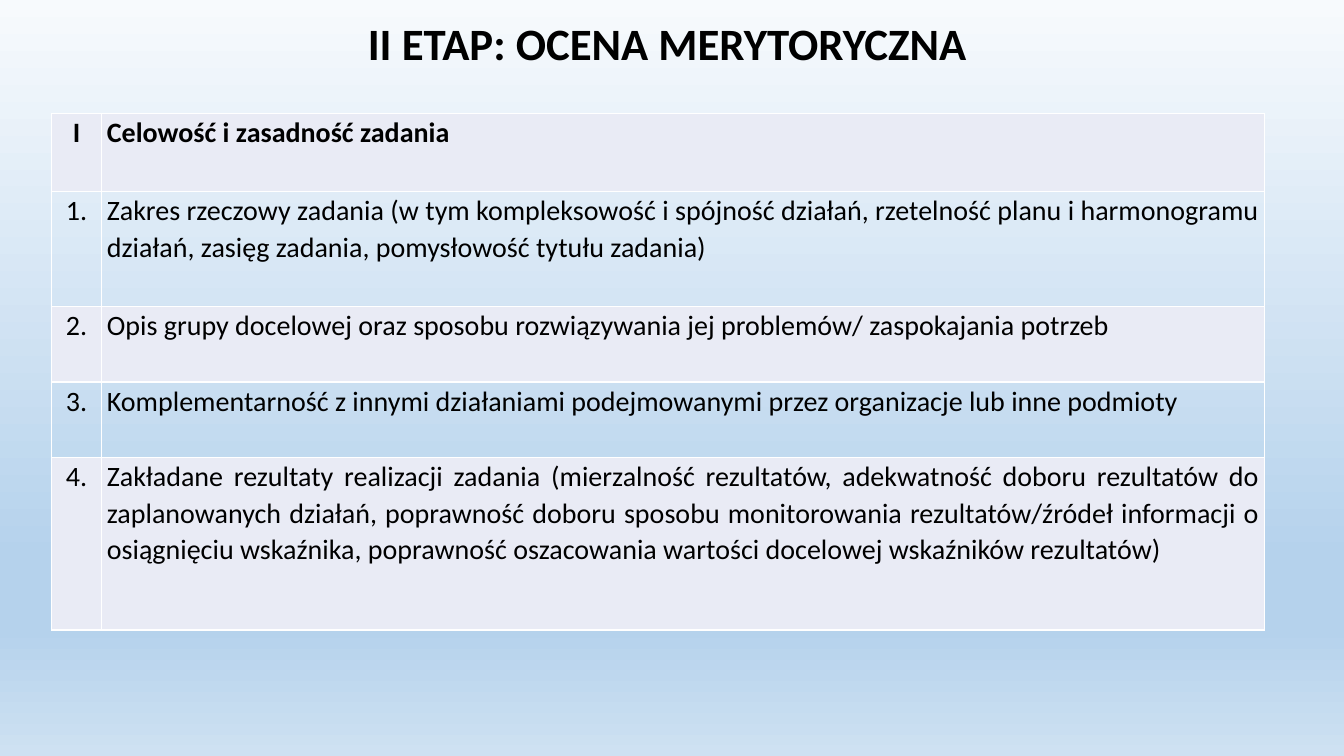
from dataclasses import dataclass

from lxml.etree import SubElement
from pptx import Presentation
from pptx.dml.color import RGBColor
from pptx.enum.text import MSO_ANCHOR as Anchor, PP_ALIGN as Align
from pptx.oxml.ns import qn
from pptx.util import Inches, Pt

WIDTH, HEIGHT = 13.33, 7.5
FONT = "Calibri"
BLACK, WHITE, BAND = "000000", "FFFFFF", "E9EBF5"
BACKGROUND_STOPS = [(0, "F7FAFD"), (74, "B5D2EC"), (83, "B5D2EC"), (100, "CEE1F2")]
TABLE_LEFT, TABLE_TOP = 0.51, 1.13
COLUMN_WIDTHS = [0.5, 11.53]


@dataclass
class Criterion:
    number: str
    text: str
    height: float
    align: Align = Align.LEFT
    bold: bool = False
    space_after: float = 8


CRITERIA = [
    Criterion("I", "Celowość i zasadność zadania", 0.77, bold=True),
    Criterion("1.", "Zakres rzeczowy zadania (w tym kompleksowość i spójność działań, "
              "rzetelność planu i harmonogramu działań, zasięg zadania, "
              "pomysłowość tytułu zadania)", 1.14, Align.JUSTIFY),
    Criterion("2.", "Opis grupy docelowej oraz sposobu rozwiązywania jej problemów/ "
              "zaspokajania potrzeb", 0.75),
    Criterion("3.", "Komplementarność z innymi działaniami podejmowanymi przez "
              "organizacje lub inne podmioty", 0.75),
    Criterion("4.", "Zakładane rezultaty realizacji zadania (mierzalność rezultatów, "
              "adekwatność doboru rezultatów do zaplanowanych działań, poprawność doboru "
              "sposobu monitorowania rezultatów/źródeł informacji o osiągnięciu wskaźnika, "
              "poprawność oszacowania wartości docelowej wskaźników rezultatów) ",
              1.71, Align.JUSTIFY, space_after=0),
]


def color(value: str) -> RGBColor:
    return RGBColor.from_string(value)


def write(frame, text: str, size: float, align: Align, bold: bool,
          space_after: float = 8) -> None:
    frame.text = text
    para = frame.paragraphs[0]
    para.alignment = align
    para.line_spacing = 1.07
    para.space_before, para.space_after = Pt(0), Pt(space_after)
    font = para.runs[0].font
    font.name, font.size, font.bold = FONT, Pt(size), bold
    font.color.rgb = color(BLACK)


def paint_background(page) -> None:
    fill = page.background.fill
    fill.gradient()
    fill.gradient_angle = 270
    stops = page.element.find(".//" + qn("a:gsLst"))
    for stop in list(stops):
        stops.remove(stop)
    for percent, value in BACKGROUND_STOPS:
        stop = SubElement(stops, qn("a:gs"), pos=str(percent * 1000))
        SubElement(stop, qn("a:srgbClr"), val=value)


def add_borders(cell) -> None:
    properties = cell._tc.get_or_add_tcPr()
    for index, side in enumerate(("a:lnL", "a:lnR", "a:lnT", "a:lnB")):
        line = SubElement(properties, qn(side), w=str(Pt(1)))
        SubElement(SubElement(line, qn("a:solidFill")), qn("a:srgbClr"), val=WHITE)
        properties.insert(index, line)  # borders come before the fill


def format_cell(cell, text: str, align: Align, criterion: Criterion, banded: bool) -> None:
    cell.margin_left = cell.margin_right = Inches(0.05)
    cell.margin_top = cell.margin_bottom = 0
    cell.vertical_anchor = Anchor.TOP
    if banded:
        cell.fill.solid()
        cell.fill.fore_color.rgb = color(BAND)
    else:
        cell.fill.background()
    add_borders(cell)
    write(cell.text_frame, text, 20, align, criterion.bold, criterion.space_after)


def add_criteria_table(page) -> None:
    total_height = sum(criterion.height for criterion in CRITERIA)
    table = page.shapes.add_table(
        len(CRITERIA), len(COLUMN_WIDTHS), Inches(TABLE_LEFT), Inches(TABLE_TOP),
        Inches(sum(COLUMN_WIDTHS)), Inches(total_height)).table
    table.first_row = table.horz_banding = False
    for column, width in zip(table.columns, COLUMN_WIDTHS):
        column.width = Inches(width)
    for index, criterion in enumerate(CRITERIA):
        table.rows[index].height = Inches(criterion.height)
        banded = index % 2 == 0
        format_cell(table.cell(index, 0), criterion.number, Align.CENTER, criterion, banded)
        format_cell(table.cell(index, 1), criterion.text, criterion.align, criterion, banded)


def main() -> None:
    deck = Presentation()
    deck.slide_width, deck.slide_height = Inches(WIDTH), Inches(HEIGHT)
    page = deck.slides.add_slide(deck.slide_layouts[5])
    paint_background(page)

    # Title
    title = page.shapes.title
    title.left, title.top = Inches(0.92), Inches(0.12)
    title.width, title.height = Inches(11.5), Inches(0.57)
    title.text_frame.vertical_anchor = Anchor.MIDDLE
    write(title.text_frame, "II ETAP: OCENA MERYTORYCZNA ", 32, Align.CENTER, True)

    # Assessment criteria
    add_criteria_table(page)
    deck.save("out.pptx")


if __name__ == "__main__":
    main()
